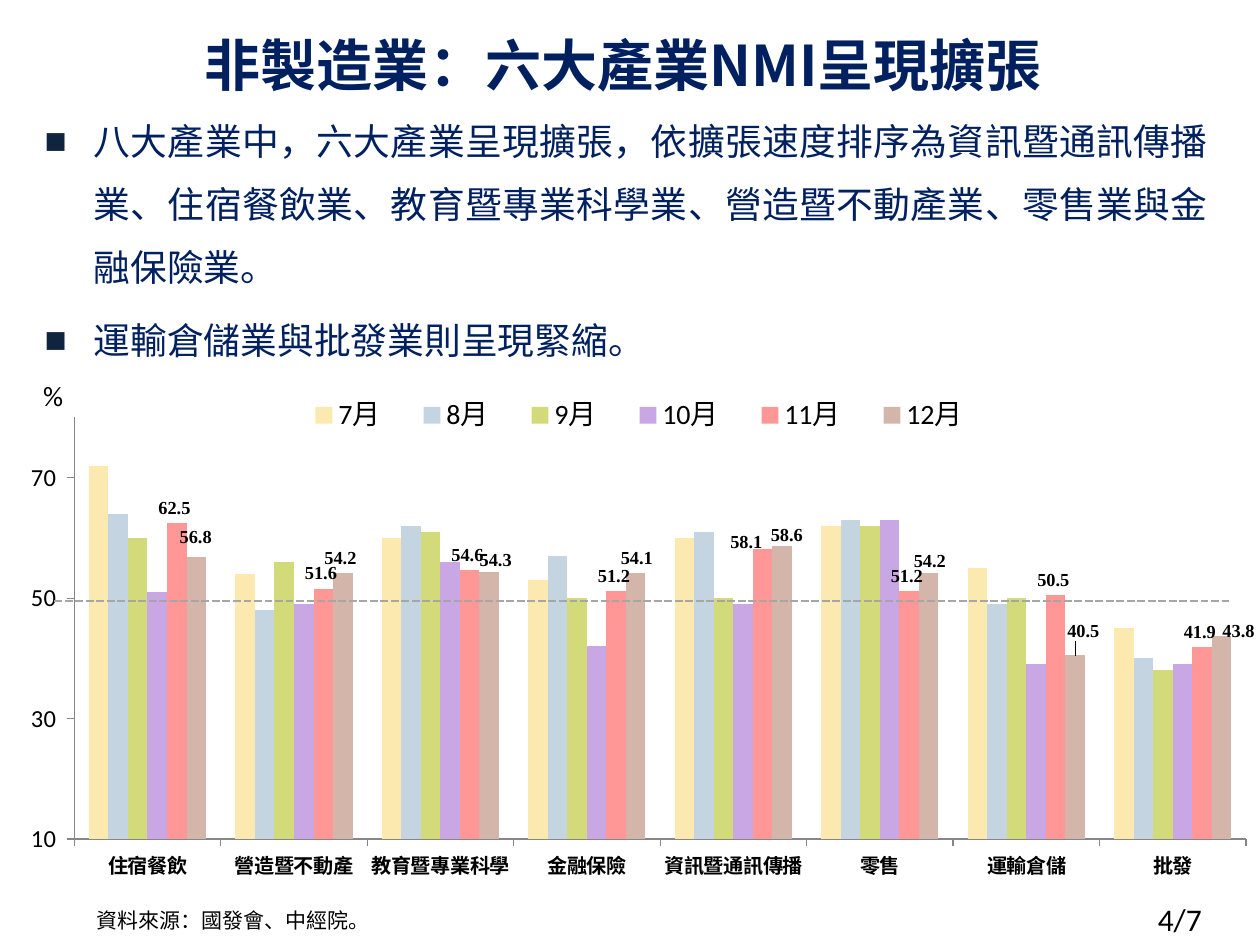
from dataclasses import dataclass, field

from lxml.etree import SubElement
from pptx import Presentation
from pptx.chart.data import CategoryChartData
from pptx.dml.color import RGBColor
from pptx.enum.chart import XL_CHART_TYPE, XL_LABEL_POSITION, XL_LEGEND_POSITION, XL_TICK_MARK
from pptx.enum.dml import MSO_LINE
from pptx.enum.shapes import MSO_CONNECTOR, MSO_SHAPE
from pptx.enum.text import MSO_ANCHOR, PP_ALIGN
from pptx.oxml import parse_xml
from pptx.oxml.ns import nsdecls, qn
from pptx.util import Pt

SANS, CJK, CJK_JP, SERIF = "Calibri", "Noto Sans CJK SC", "Noto Sans CJK JP", "Times New Roman"
NAVY, BLACK = "002060", "000000"
CHART_BOX = (3, 213, 717, 304.6)


@dataclass
class Style:
    size: float
    face: str
    color: str = BLACK
    bold: bool = False


@dataclass
class Month:
    name: str
    color: str
    values: tuple
    labelled: bool = False
    # Label shifts in points, by category index
    shifts: dict = field(default_factory=dict)


CATEGORIES = ("住宿餐飲", "營造暨不動產", "教育暨專業科學", "金融保險",
              "資訊暨通訊傳播", "零售", "運輸倉儲", "批發")
MONTHS = (
    Month("7月", "FCE9AF", (72, 54, 60, 53, 60, 62, 55, 45)),
    Month("8月", "C5D4E1", (64, 48, 62, 57, 61, 63, 49, 40)),
    Month("9月", "D2DA7A", (60, 56, 61, 50, 50, 62, 50, 38)),
    Month("10月", "C9A6E4", (51, 49, 56, 42, 49, 63, 39, 39)),
    Month("11月", "FF9797", (62.5, 51.6, 54.6, 51.2, 58.1, 51.2, 50.5, 41.9), True,
          {4: (-8, 4.5)}),
    Month("12月", "D4B5AA", (56.8, 54.2, 54.3, 54.1, 58.6, 54.2, 40.5, 43.8), True,
          {0: (1, -3), 2: (5, 2), 3: (2, 0), 4: (4, 2), 5: (2, 2), 6: (6, -5), 7: (11, 6)}),
)
POINTS = (
    "八大產業中，六大產業呈現擴張，依擴張速度排序為資訊暨通訊傳播業、住宿餐飲業、"
    "教育暨專業科學業、營造暨不動產業、零售業與金融保險業。",
    "運輸倉儲業與批發業則呈現緊縮。",
)


def rgb(color: str) -> RGBColor:
    return RGBColor.from_string(color)


def apply_style(font, style: Style) -> None:
    font.size, font.name, font.bold = Pt(style.size), style.face, style.bold
    font.color.rgb = rgb(style.color)


def set_east_asian(element) -> None:
    """Give East Asian text the same typeface as Latin text."""
    for latin in list(element.iter(qn("a:latin"))):
        latin.addnext(parse_xml(f'<a:ea {nsdecls("a")} typeface="{latin.get("typeface")}"/>'))


def add_span(para, text: str, style: Style) -> None:
    span = para.add_run()
    span.text = text
    apply_style(span.font, style)
    set_east_asian(para._p)


def set_indent(para, left: float, hanging: float):
    properties = para._p.get_or_add_pPr()
    properties.set("marL", str(Pt(left)))
    properties.set("indent", str(-Pt(hanging)))
    return properties


def add_note(page, place: tuple, text: str, style: Style):
    box = page.shapes.add_textbox(*map(Pt, place))
    box.text_frame.word_wrap = True
    para = box.text_frame.paragraphs[0]
    add_span(para, text, style)
    return para


def add_title(page, text: str) -> None:
    title = page.shapes.title
    title.left, title.top, title.width, title.height = map(Pt, (0, 0, 720, 72))
    title.text_frame.vertical_anchor = MSO_ANCHOR.MIDDLE
    para = title.text_frame.paragraphs[0]
    para.alignment, para.line_spacing = PP_ALIGN.CENTER, Pt(40)
    set_indent(para, 57, 57)
    add_span(para, text, Style(32, CJK, NAVY, True))


def add_points(page, texts: tuple) -> None:
    box = page.shapes.add_shape(MSO_SHAPE.ROUNDED_RECTANGLE, *map(Pt, (3, 49, 702.5, 163.5)))
    box.shadow.inherit = False
    box.fill.background()
    box.line.fill.background()
    frame = box.text_frame
    frame.word_wrap, frame.vertical_anchor = True, MSO_ANCHOR.TOP
    frame.margin_top = frame.margin_bottom = 0
    for index, text in enumerate(texts):
        para = frame.add_paragraph() if index else frame.paragraphs[0]
        para.alignment, para.level = PP_ALIGN.JUSTIFY, 1
        para.line_spacing, para.space_before = Pt(36), Pt(6)
        properties = set_indent(para, 35.5, 28)
        bullet_color = SubElement(properties, qn("a:buClr"))
        SubElement(bullet_color, qn("a:srgbClr"), val="0F243E")
        SubElement(properties, qn("a:buFont"), typeface="Arial")
        SubElement(properties, qn("a:buChar"), char="■")
        add_span(para, text, Style(21, CJK, NAVY))


def set_layout(parent, position: int, inner: bool = False, edge: bool = True, **lengths) -> None:
    """Place a chart part by fractions of the chart's size."""
    for old in parent.findall(qn("c:layout")):
        parent.remove(old)
    layout = parse_xml(f'<c:layout {nsdecls("c")}/>')
    manual = SubElement(layout, qn("c:manualLayout"))
    if inner:
        SubElement(manual, qn("c:layoutTarget"), val="inner")
    if edge:
        for mode in ("xMode", "yMode"):
            SubElement(manual, qn(f"c:{mode}"), val="edge")
    for key, length in lengths.items():
        SubElement(manual, qn(f"c:{key}"), val=f"{length:.4f}")
    parent.insert(position, layout)


def format_axis(axis, style: Style) -> None:
    axis.has_major_gridlines = False
    axis.major_tick_mark, axis.minor_tick_mark = XL_TICK_MARK.OUTSIDE, XL_TICK_MARK.NONE
    axis.format.line.color.rgb = rgb("868686")
    apply_style(axis.tick_labels.font, style)


def format_series(series, month: Month) -> None:
    series.format.fill.solid()
    series.format.fill.fore_color.rgb = rgb(month.color)
    series.invert_if_negative = False
    if not month.labelled:
        return
    style = Style(10.5, SERIF, bold=True)
    labels = series.data_labels
    labels.show_value, labels.position = True, XL_LABEL_POSITION.OUTSIDE_END
    labels.number_format, labels.number_format_is_linked = "0.0_ ", False
    apply_style(labels.font, style)
    for index, (right, down) in month.shifts.items():
        label = series.points[index].data_label
        apply_style(label.font, style)
        label.position = XL_LABEL_POSITION.OUTSIDE_END
    for item in labels._element.findall(qn("c:dLbl")):
        right, down = month.shifts[int(item.find(qn("c:idx")).get("val"))]
        set_layout(item, 1, edge=False, x=right / CHART_BOX[2], y=down / CHART_BOX[3])


def add_index_chart(page) -> None:
    data = CategoryChartData(number_format="0.0")
    data.categories = CATEGORIES
    for month in MONTHS:
        data.add_series(month.name, month.values)
    chart = page.shapes.add_chart(XL_CHART_TYPE.COLUMN_CLUSTERED, *map(Pt, CHART_BOX), data).chart
    apply_style(chart.font, Style(18, "Cabin"))
    chart.has_title = False
    plot = chart.plots[0]
    plot.gap_width, plot.overlap, plot.vary_by_categories = 150, 0, False
    for series, month in zip(plot.series, MONTHS):
        format_series(series, month)

    # Axes
    format_axis(chart.category_axis, Style(11.5, CJK, bold=True))
    values = chart.value_axis
    format_axis(values, Style(14, SANS))
    values.minimum_scale, values.maximum_scale, values.major_unit = 10, 80, 20
    values.tick_labels.number_format = "0_ ;[Red]\\-0\\ "
    values.tick_labels.number_format_is_linked = False

    # Legend and plot area
    chart.has_legend = True
    chart.legend.position, chart.legend.include_in_layout = XL_LEGEND_POSITION.TOP, False
    apply_style(chart.legend.font, Style(16, SANS))
    area = chart.element.find(f'{qn("c:chart")}/{qn("c:plotArea")}')
    set_layout(area, 0, inner=True, x=0.055, y=0.084, w=0.934, h=0.791)
    set_layout(chart.element.find(f'{qn("c:chart")}/{qn("c:legend")}'), 1,
               x=0.22, y=0.04, w=0.57, h=0.08)
    set_east_asian(chart.element)


def add_threshold(page) -> None:
    line = page.shapes.add_connector(MSO_CONNECTOR.STRAIGHT, *map(Pt, (31, 343.5, 702.5, 343.5)))
    line.line.color.rgb = rgb("A6A6A6")
    line.line.width, line.line.dash_style = Pt(1.5), MSO_LINE.SQUARE_DOT
    SubElement(line.element.spPr, qn("a:effectLst"))


def main() -> None:
    deck = Presentation()
    deck.slide_width, deck.slide_height = Pt(720), Pt(540)
    page = deck.slides.add_slide(deck.slide_layouts[5])

    # Page number and source
    add_note(page, (654.5, 510.5, 65.5, 29), "4/7", Style(18, SANS))
    source = add_note(page, (48, 517.5, 672, 19.5), "資料來源：國發會、中經院。", Style(12, CJK_JP))
    source.line_spacing, source.space_before = Pt(12), Pt(2)
    set_indent(source, 21.5, 21.5)

    # Title and findings
    add_title(page, "非製造業：六大產業NMI呈現擴張 ")
    add_points(page, POINTS)

    # Chart with its unit and the 50 mark
    add_index_chart(page)
    add_note(page, (17.5, 212.5, 45.5, 26.5), "%", Style(16, SANS))
    add_threshold(page)
    deck.save("out.pptx")


if __name__ == "__main__":
    main()
